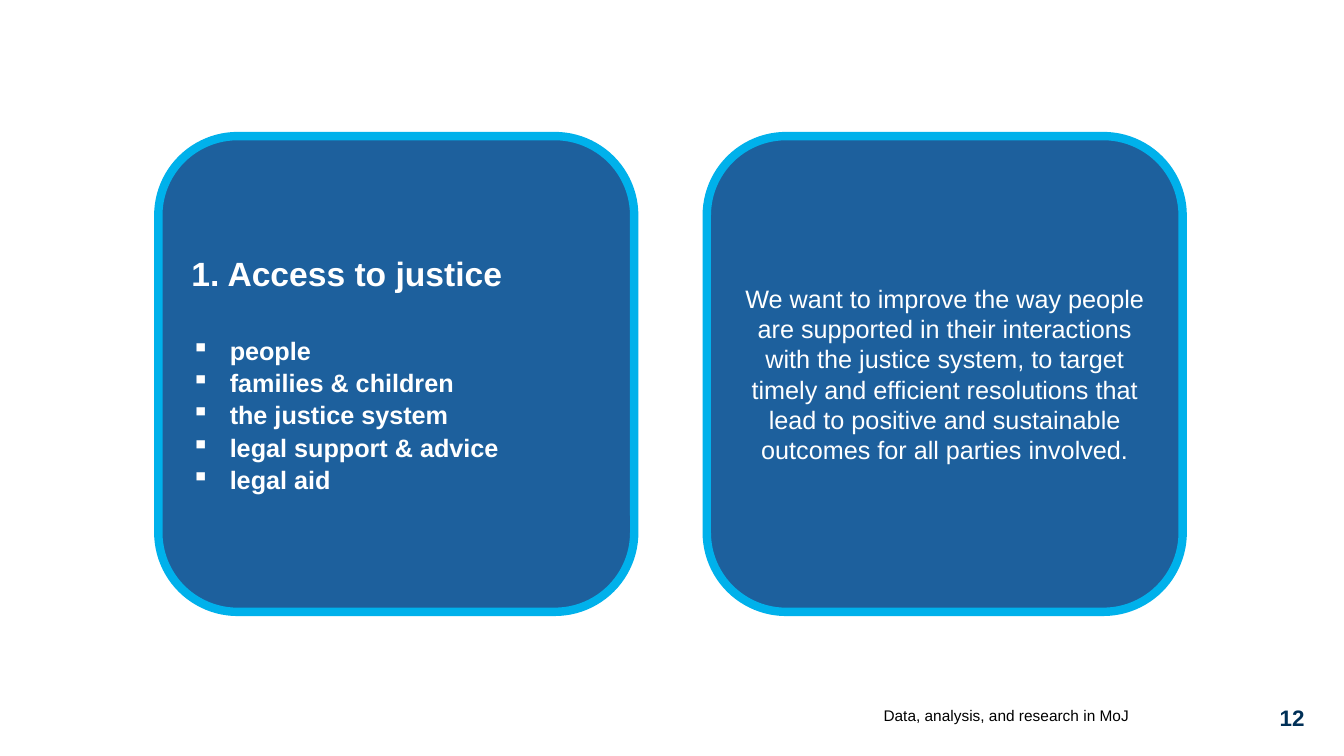
import pptx
import pptx.util
import pptx.dml.color
import pptx.enum.shapes
import pptx.enum.text
import pptx.oxml.ns
import lxml.etree

Inches = pptx.util.Inches
Pt = pptx.util.Pt
ALIGN = pptx.enum.text.PP_ALIGN
ANCHOR = pptx.enum.text.MSO_ANCHOR


def color(value):
    return pptx.dml.color.RGBColor.from_string(value)


def style(paragraph, size, value, bold=False, align=ALIGN.LEFT):
    paragraph.alignment = align
    for run in paragraph.runs:
        run.font.name = "Arial"
        run.font.size = Pt(size)
        run.font.bold = bold
        run.font.color.rgb = color(value)


presentation = pptx.Presentation()
presentation.slide_width = Inches(13.33)
presentation.slide_height = Inches(7.5)
slide = presentation.slides.add_slide(presentation.slide_layouts[6])

# Footer and page number
footers = [
    ("Data, analysis, and research in MoJ", (8.09, 6.92, 3.11, 0.36),
     11, "000000", False, ALIGN.RIGHT, ANCHOR.MIDDLE),
    ("12", (12.62, 6.99, 0.39, 0.28),
     16, "003057", True, ALIGN.CENTER, ANCHOR.TOP),
]
for text, box, size, value, bold, align, anchor in footers:
    text_frame = slide.shapes.add_textbox(*map(Inches, box)).text_frame
    text_frame.word_wrap = True
    text_frame.margin_left = text_frame.margin_right = 0
    text_frame.margin_top = text_frame.margin_bottom = 0
    text_frame.vertical_anchor = anchor
    text_frame.text = text
    style(text_frame.paragraphs[0], size, value, bold, align)

# Two rounded cards
cards = []
for left in (1.57, 7.01):
    shape = slide.shapes.add_shape(
        pptx.enum.shapes.MSO_SHAPE.ROUNDED_RECTANGLE,
        Inches(left), Inches(1.35), Inches(4.72), Inches(4.72))
    shape.shadow.inherit = False
    shape.fill.solid()
    shape.fill.fore_color.rgb = color("1D609D")
    shape.line.color.rgb = color("00B1EB")
    shape.line.width = Pt(6)
    shape.text_frame.word_wrap = True
    shape.text_frame.vertical_anchor = ANCHOR.MIDDLE
    cards.append(shape.text_frame)
topic, aim = cards

# Topic heading and bullets
topic.text = "1. Access to justice"
style(topic.paragraphs[0], 24, "FFFFFF", bold=True)
topics = ["people", "families & children", "the justice system",
          "legal support & advice", "legal aid"]
for index, text in enumerate(topics):
    paragraph = topic.add_paragraph()
    paragraph.text = text
    paragraph.line_spacing = 1.07
    if index == 0:
        paragraph.space_before = Pt(28)
    properties = paragraph._p.get_or_add_pPr()
    properties.set("marL", str(Inches(0.38)))
    properties.set("indent", str(-Inches(0.38)))
    bullet = lxml.etree.SubElement(properties, pptx.oxml.ns.qn("a:buChar"))
    bullet.set("char", "▪")
    style(paragraph, 18, "FFFFFF", bold=True)

# Aim statement
aim.text = (
    "We want to improve the way people are supported in their interactions "
    "with the justice system, to target timely and efficient resolutions that "
    "lead to positive and sustainable outcomes for all parties involved.")
style(aim.paragraphs[0], 18, "FFFFFF", align=ALIGN.CENTER)

presentation.save("out.pptx")
